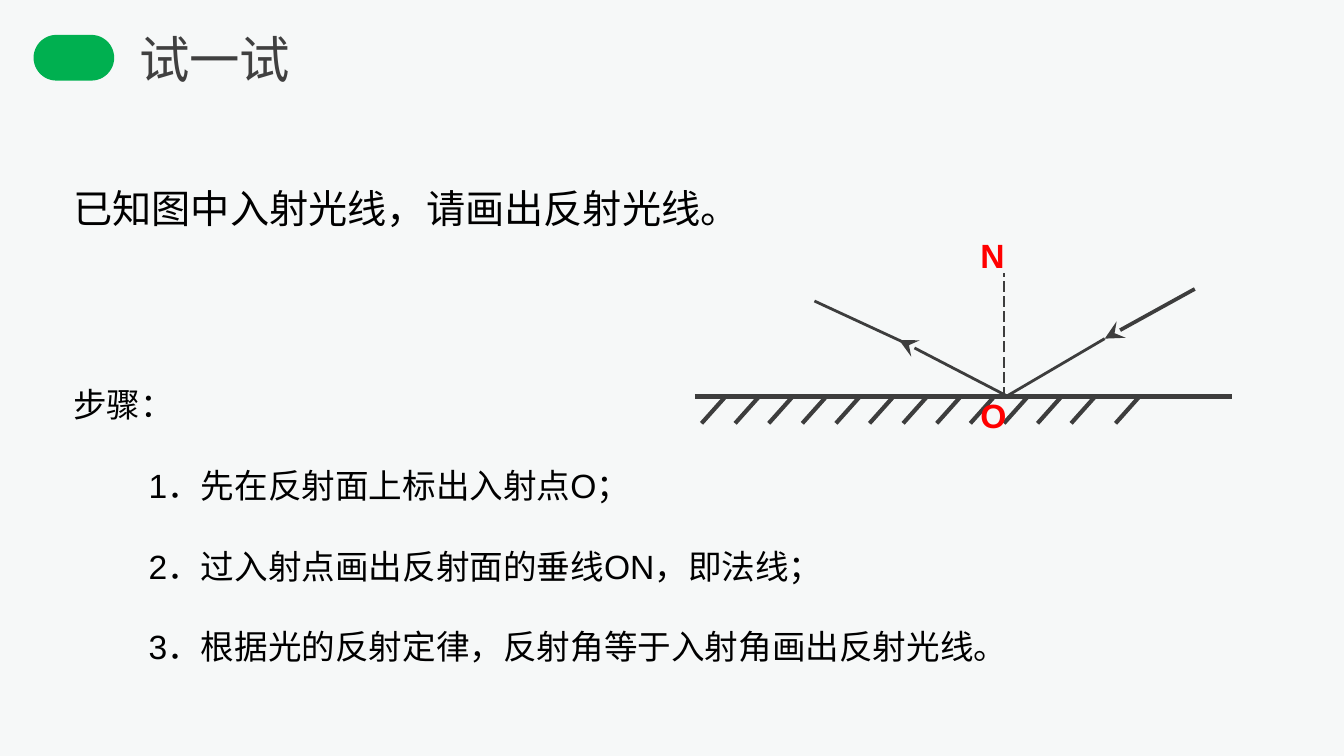
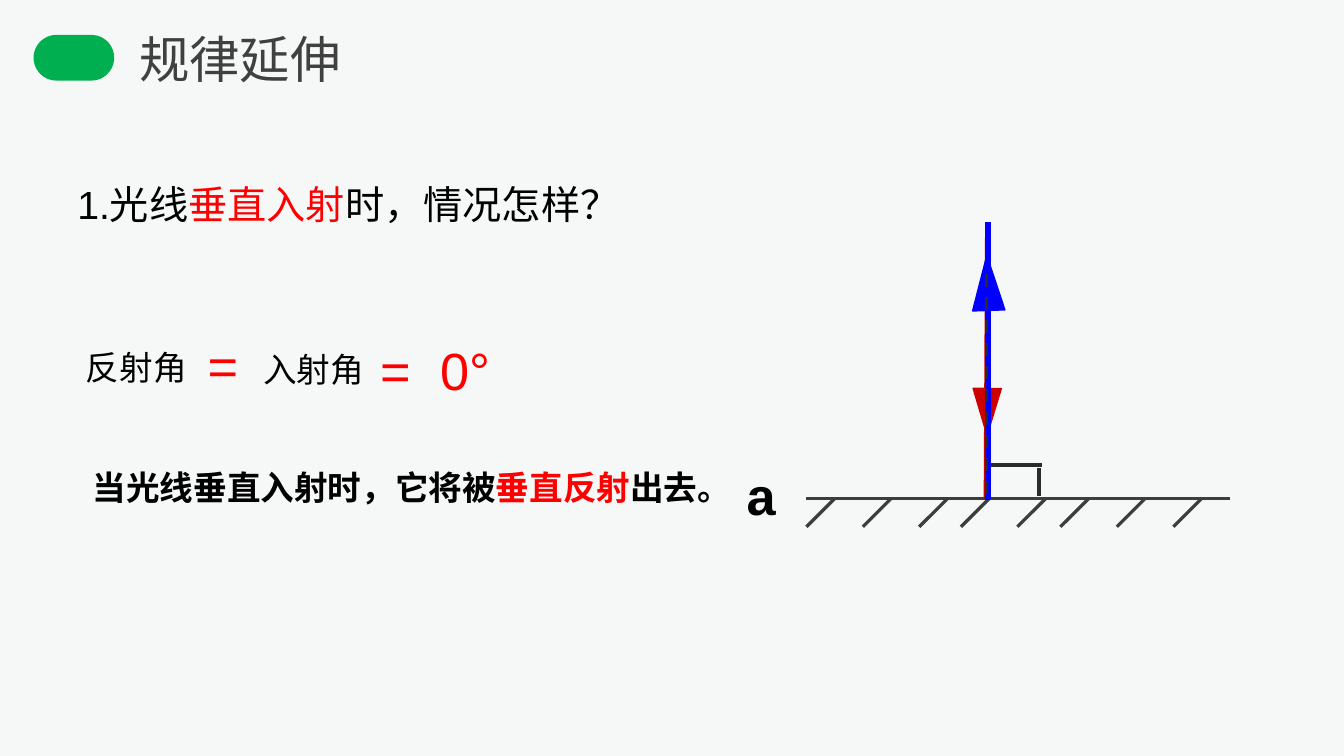
from dataclasses import dataclass
from typing import NamedTuple, Optional

import lxml.etree
import pptx
import pptx.dml.color
import pptx.enum.dml
import pptx.enum.shapes
import pptx.enum.text
import pptx.oxml.ns
import pptx.util

ALIGN = pptx.enum.text.PP_ALIGN
DASH = pptx.enum.dml.MSO_LINE
SHAPE = pptx.enum.shapes.MSO_SHAPE
COLUMNS = 100
ROWS = 56.25
CELL = pptx.util.Inches(0.1)


@dataclass(frozen=True)
class Theme:
    font: str = "Arial"
    paper: str = "F6F8F8"
    pill: str = "00B050"
    heading: str = "404040"
    ink: str = "000000"
    accent: str = "FF0000"
    line: str = "3D3D3D"
    mark: str = "2B2B2B"
    incident: str = "CC0000"
    reflected: str = "0000FF"
    heading_size: float = 27
    question_size: float = 21
    body_size: float = 18
    symbol_size: float = 28


THEME = Theme()


class Box(NamedTuple):
    col: float
    row: float
    cols: float
    rows: float


class Run(NamedTuple):
    text: str
    color: str = THEME.ink
    bold: bool = False


class Para(NamedTuple):
    runs: tuple[Run, ...]
    indent: float = 0
    spacing: Optional[float] = None
    align: ALIGN = ALIGN.LEFT


class Label(NamedTuple):
    box: Box
    paras: tuple[Para, ...]
    size: float
    inset: tuple[float, float] = (0.75, 0.38)
    wrap: bool = True
    trim: float = 0


class Line(NamedTuple):
    x1: float
    y1: float
    x2: float
    y2: float
    width: float
    color: str = THEME.line
    dash: Optional[DASH] = None
    arrow: bool = False


class Solid(NamedTuple):
    box: Box
    kind: SHAPE
    color: str
    turn: float = 0
    outline: float = 0


def grid(cells: float) -> int:
    return round(cells * CELL)


def rgb(color: str) -> pptx.dml.color.RGBColor:
    return pptx.dml.color.RGBColor.from_string(color)


def place(sp, box: Box) -> None:
    sp.left, sp.top, sp.width, sp.height = map(grid, box)


def write(tf, label: Label) -> None:
    side, top = label.inset
    tf.word_wrap = label.wrap
    tf.auto_size = pptx.enum.text.MSO_AUTO_SIZE.NONE
    tf.vertical_anchor = pptx.enum.text.MSO_ANCHOR.TOP
    tf.margin_left = grid(side)
    tf.margin_right = grid(side + label.trim)
    tf.margin_top = tf.margin_bottom = grid(top)
    for i, para in enumerate(label.paras):
        p = tf.add_paragraph() if i else tf.paragraphs[0]
        p.alignment = para.align
        if para.spacing:
            p.line_spacing = para.spacing
        if para.indent:
            p._p.get_or_add_pPr().set("marL", str(grid(para.indent)))
        for run in para.runs:
            r = p.add_run()
            r.text = run.text
            r.font.name = THEME.font
            r.font.size = pptx.util.Pt(label.size)
            r.font.bold = run.bold
            r.font.color.rgb = rgb(run.color)


def add_label(s, label: Label) -> None:
    sp = s.shapes.add_textbox(*map(grid, label.box))
    write(sp.text_frame, label)


def add_line(s, line: Line) -> None:
    ends = map(grid, (line.x1, line.y1, line.x2, line.y2))
    sp = s.shapes.add_connector(pptx.enum.shapes.MSO_CONNECTOR.STRAIGHT, *ends)
    sp.line.color.rgb = rgb(line.color)
    sp.line.width = pptx.util.Pt(line.width)
    if line.dash:
        sp.line.dash_style = line.dash
    qn = pptx.oxml.ns.qn
    if line.arrow:
        ln = sp.line._get_or_add_ln()
        lxml.etree.SubElement(ln, qn("a:tailEnd"), type="stealth", w="lg", len="lg")
    lxml.etree.SubElement(sp._element.spPr, qn("a:effectLst"))


def add_solid(s, solid: Solid):
    sp = s.shapes.add_shape(solid.kind, *map(grid, solid.box))
    sp.shadow.inherit = False
    sp.fill.solid()
    sp.fill.fore_color.rgb = rgb(solid.color)
    sp.rotation = solid.turn
    if solid.outline:
        sp.line.color.rgb = rgb(solid.color)
        sp.line.width = pptx.util.Pt(solid.outline)
    else:
        sp.line.fill.background()
    return sp


def add_hatched_mirror(s, surface: Line, tops: list[float], dx: float, dy: float,
                       row: float, width: float) -> None:
    add_line(s, surface)
    for x in tops:
        add_line(s, Line(x, row, x - dx, row + dy, width))


def new_slide(prs, heading: str):
    s = prs.slides.add_slide(prs.slide_layouts.get_by_name("Title Only"))
    pill = add_solid(s, Solid(Box(2.5, 2.6, 6, 3.4), SHAPE.ROUNDED_RECTANGLE, THEME.pill))
    pill.adjustments[0] = 0.5
    box = Box(9.6, 1.7, 34.4, 5.3)
    place(s.shapes.title, box)
    para = Para((Run(heading, THEME.heading),))
    write(s.shapes.title.text_frame, Label(box, (para,), THEME.heading_size))
    return s


def one(text: str, color: str = THEME.ink, bold: bool = False) -> tuple[Para, ...]:
    return (Para((Run(text, color, bold),)),)


def build_try_it(prs) -> None:
    s = new_slide(prs, "试一试")
    steps = (
        "1．先在反射面上标出入射点O；",
        "2．过入射点画出反射面的垂线ON，即法线；",
        "3．根据光的反射定律，反射角等于入射角画出反射光线。",
    )
    paras = (Para((Run("步骤："),), spacing=2),) + tuple(
        Para((Run(step),), indent=5.6, spacing=2) for step in steps)
    add_label(s, Label(Box(4.7, 13.3, 74, 5.6),
                       one("已知图中入射光线，请画出反射光线。"), THEME.question_size))
    add_label(s, Label(Box(4.7, 25.2, 88.2, 29.8), paras, THEME.body_size))

    tops = [53.9 + 2.5 * i for i in range(12)] + [84.7]
    add_hatched_mirror(s, Line(51.7, 29.5, 91.7, 29.5, 2.5), tops, 1.7, 1.9, 29.6, 2.25)
    rays = (
        Line(82.2, 25.2, 74.7, 29.6, 1.5),
        Line(74.7, 29.6, 74.7, 20.3, 0.75, dash=DASH.LONG_DASH),
        Line(88.9, 21.5, 82.2, 25.2, 2, arrow=True),
        Line(67.3, 25.5, 60.6, 22.4, 1.5),
        Line(74.8, 29.4, 66.9, 25.3, 1.5, arrow=True),
    )
    for ray in rays:
        add_line(s, ray)
    for name, row in (("N", 17.1), ("O", 29)):
        add_label(s, Label(Box(72.2, row, 5, 3.8),
                           one(name, THEME.accent, True), THEME.body_size))


def build_extension(prs) -> None:
    s = new_slide(prs, "规律延伸")
    question = Para((Run("1.光线"), Run("垂直入射", THEME.accent), Run("时，情况怎样？")))
    wide = (1, 0.5)
    equals = one("=", THEME.accent)
    zero = (Para((Run("0°", THEME.accent),), align=ALIGN.CENTER),)
    labels = (
        Label(Box(5, 13, 42.3, 4.3), (question,), THEME.question_size, trim=3.3),
        Label(Box(5.4, 25.3, 17.1, 4), one("反射角"), THEME.body_size, wide),
        Label(Box(18.6, 25.5, 15.8, 4), one("入射角"), THEME.body_size, wide),
        Label(Box(14.7, 24.4, 3.8, 5.5), equals, THEME.symbol_size),
        Label(Box(27.3, 24.7, 4.5, 5.7), equals, THEME.symbol_size, wide),
        Label(Box(31.7, 24.7, 5.8, 5.7), zero, THEME.symbol_size, wide, False),
        Label(Box(54.8, 34.1, 7.1, 5.5), one("a", bold=True), THEME.symbol_size),
    )
    for label in labels:
        add_label(s, label)

    tops = [62.1, 66.3, 70.5, 73.6, 77.8, 81, 85.2, 89.4]
    add_hatched_mirror(s, Line(91.5, 37.1, 60, 37.1, 1.75), tops, 2.1, 2.1, 37.1, 1.75)
    add_solid(s, Solid(Box(72.4, 28.9, 2.1, 3.5), SHAPE.ISOSCELES_TRIANGLE,
                       THEME.incident, 180.2, 0.75))
    add_line(s, Line(73.4, 37, 73.5, 17.2, 3, THEME.incident))
    add_line(s, Line(73.3, 34.6, 77.5, 34.6, 1.75, THEME.mark))
    add_line(s, Line(77.3, 34.8, 77.3, 36.9, 1.75, THEME.mark))
    add_solid(s, Solid(Box(72.3, 19, 2.4, 4.1), SHAPE.ISOSCELES_TRIANGLE,
                       THEME.reflected, 358, 0.75))
    add_line(s, Line(73.5, 16.5, 73.5, 37.2, 3, THEME.reflected))
    add_line(s, Line(73.4, 20.4, 73.4, 36.9, 1.75, THEME.mark, DASH.DASH))

    conclusion = Para((
        Run("当光线垂直入射时，它将被", bold=True),
        Run("垂直反射", THEME.accent, True),
        Run("出去。", bold=True),
    ), spacing=1.25, align=ALIGN.CENTER)
    add_label(s, Label(Box(5.9, 33.6, 49.5, 4.5), (conclusion,), THEME.body_size, wrap=False))


def main() -> None:
    prs = pptx.Presentation()
    prs.slide_width, prs.slide_height = grid(COLUMNS), grid(ROWS)
    fill = prs.slide_master.background.fill
    fill.solid()
    fill.fore_color.rgb = rgb(THEME.paper)
    build_try_it(prs)
    build_extension(prs)
    prs.save("out.pptx")


if __name__ == "__main__":
    main()
